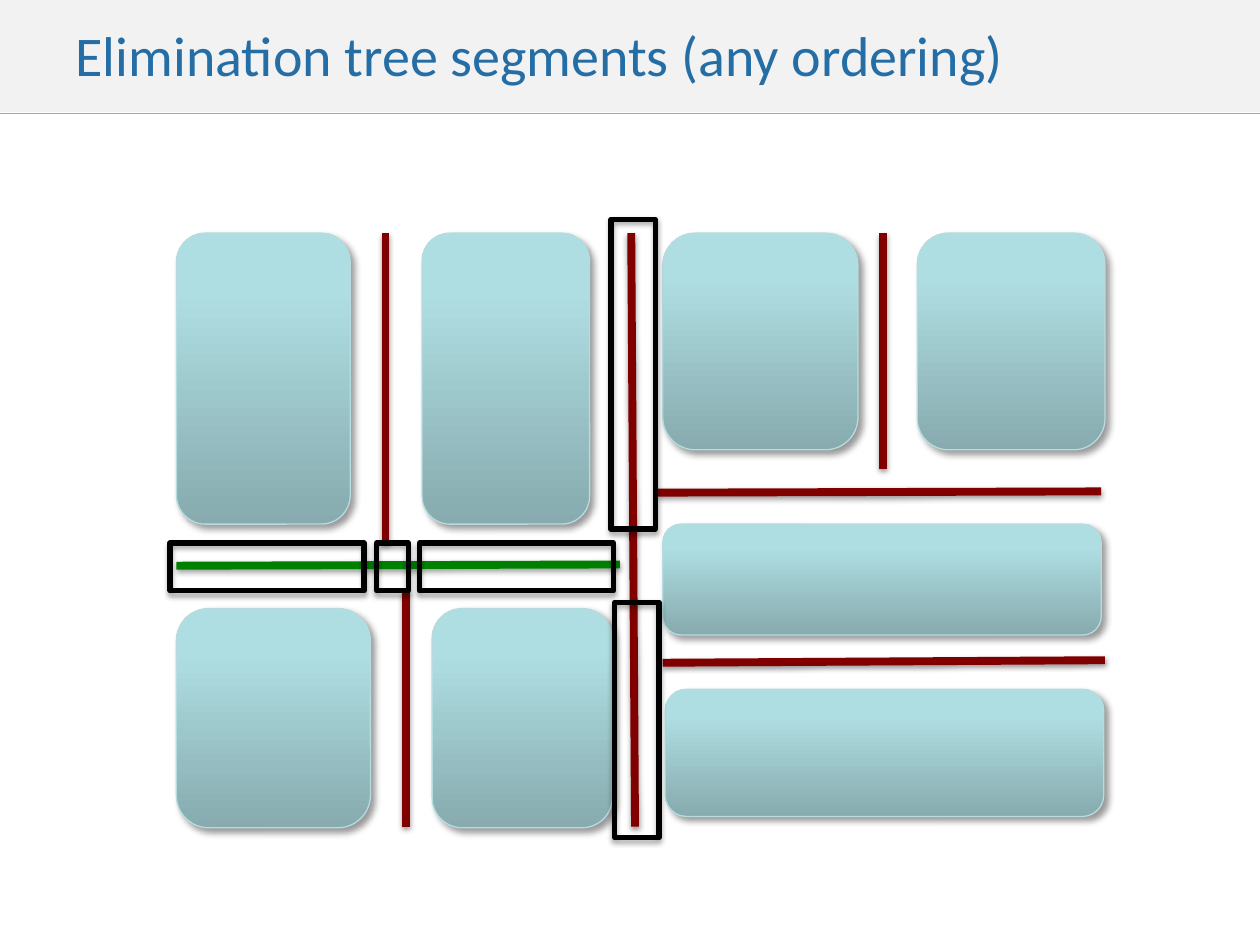
from typing import NamedTuple

from lxml.etree import SubElement
from pptx import Presentation
from pptx.dml.color import RGBColor
from pptx.enum.shapes import MSO_CONNECTOR, MSO_SHAPE
from pptx.enum.text import MSO_ANCHOR, MSO_AUTO_SIZE, PP_ALIGN
from pptx.oxml import parse_xml
from pptx.oxml.ns import nsdecls, qn
from pptx.util import Inches, Pt

COLORS = {
    "header": "F2F2F2",
    "rule": "A6A6A6",
    "title": "246DA5",
    "separator": "800000",
    "split": "008000",
    "segment": "000000",
    "shadow": "000000",
    "block_edge": "B6DCDF",
    "block_bottom": "87ABAE",
    "block_middle": "AFDEE2",
    "block_top": "AFE0E4",
}


class Box(NamedTuple):
    left: float
    top: float
    width: float
    height: float


class Separator(NamedTuple):
    x1: float
    y1: float
    x2: float
    y2: float
    color: str = "separator"


class Shadow(NamedTuple):
    opacity: int
    blur: float
    distance: float
    degrees: int


SEPARATOR_SHADOW = Shadow(38, 3.1, 1.6, 90)
BLOCK_SHADOW = Shadow(40, 4, 3, 45)
SEGMENT_SHADOW = Shadow(35, 3.1, 1.8, 90)

TOP = 1.85
BOTTOM = 6.56
LEFT = 1.4
RIGHT_HALF = 5.26
LOWER_ROW = 4.83
CROSSING = 4.31

SEPARATORS = [
    Separator(5.01, TOP, 5.04, BOTTOM),
    Separator(5.22, 3.91, 8.74, 3.9),
    Separator(LEFT, 4.49, 4.92, 4.48, "split"),
    Separator(3.06, TOP, 3.06, CROSSING),
    Separator(3.22, 4.69, 3.22, BOTTOM),
    Separator(7.01, TOP, 7.01, 3.72),
    Separator(RIGHT_HALF, 5.26, 8.77, 5.24),
]

BLOCKS = [
    Box(LEFT, TOP, 1.38, 2.31),
    Box(3.35, TOP, 1.33, 2.31),
    Box(RIGHT_HALF, TOP, 1.55, 1.72),
    Box(LEFT, LOWER_ROW, 1.54, 1.74),
    Box(7.28, TOP, 1.49, 1.72),
    Box(3.43, LOWER_ROW, 1.43, 1.74),
    Box(RIGHT_HALF, 4.16, 3.48, 0.88),
    Box(5.28, 5.47, 3.48, 1.01),
]

SEGMENTS = [
    Box(1.35, CROSSING, 1.54, 0.38),
    Box(2.99, CROSSING, 0.25, 0.38),
    Box(3.33, CROSSING, 1.54, 0.38),
    Box(4.85, 1.74, 0.35, 2.46),
    Box(4.88, 4.78, 0.35, 1.87),
]


def rgb(name: str) -> RGBColor:
    return RGBColor.from_string(COLORS[name])


def set_line(shape, color: str, width: float) -> None:
    shape.line.color.rgb = rgb(color)
    shape.line.width = Pt(width)


def set_effects(shape, shadow: Shadow | None = None) -> None:
    effects = SubElement(shape._element.spPr, qn("a:effectLst"))
    if shadow is None:
        return
    outer = SubElement(
        effects,
        qn("a:outerShdw"),
        blurRad=str(Pt(shadow.blur)),
        dist=str(Pt(shadow.distance)),
        dir=str(shadow.degrees * 60000),
        rotWithShape="0",
    )
    tint = SubElement(outer, qn("a:srgbClr"), val=COLORS["shadow"])
    SubElement(tint, qn("a:alpha"), val=str(shadow.opacity * 1000))


def add_line(slide, run: Separator, width: float, shadow: Shadow | None = None) -> None:
    ends = [Inches(value) for value in run[:4]]
    connector = slide.shapes.add_connector(MSO_CONNECTOR.STRAIGHT, *ends)
    set_line(connector, run.color, width)
    set_effects(connector, shadow)


def add_block(slide, box: Box) -> None:
    block = slide.shapes.add_shape(MSO_SHAPE.ROUNDED_RECTANGLE, *map(Inches, box))
    stops = [(0, "block_bottom"), (80, "block_middle"), (100, "block_top")]
    stop_xml = "".join(
        f'<a:gs pos="{position * 1000}"><a:srgbClr val="{COLORS[name]}"/></a:gs>'
        for position, name in stops
    )
    gradient = parse_xml(
        f'<a:gradFill {nsdecls("a")} rotWithShape="1"><a:gsLst>{stop_xml}</a:gsLst>'
        '<a:lin ang="16200000" scaled="0"/></a:gradFill>'
    )
    block._element.spPr.find(qn("a:prstGeom")).addnext(gradient)
    set_line(block, "block_edge", 0.75)
    set_effects(block, BLOCK_SHADOW)


def add_segment(slide, box: Box) -> None:
    segment = slide.shapes.add_shape(MSO_SHAPE.RECTANGLE, *map(Inches, box))
    segment.fill.background()
    set_line(segment, "segment", 3)
    set_effects(segment, SEGMENT_SHADOW)


def set_title(slide, text: str) -> None:
    title = slide.shapes.title
    title.left, title.top, title.width, title.height = map(Inches, (0, -0.03, 10, 0.92))
    title.fill.solid()
    title.fill.fore_color.rgb = rgb("header")
    frame = title.text_frame
    frame.text = text
    frame.word_wrap = True
    frame.auto_size = MSO_AUTO_SIZE.NONE
    frame.vertical_anchor = MSO_ANCHOR.MIDDLE
    frame.margin_left = Inches(0.6)
    paragraph = frame.paragraphs[0]
    paragraph.alignment = PP_ALIGN.LEFT
    font = paragraph.runs[0].font
    font.name = "Calibri"
    font.size = Pt(32)
    font.color.rgb = rgb("title")


def main() -> None:
    deck = Presentation()
    deck.slide_width, deck.slide_height = Inches(10), Inches(7.5)
    slide = deck.slides.add_slide(deck.slide_layouts[5])
    set_title(slide, "Elimination tree segments (any ordering)")
    add_line(slide, Separator(0, 0.9, 10, 0.9, "rule"), 1)
    for separator in SEPARATORS:
        add_line(slide, separator, 4.5, SEPARATOR_SHADOW)
    for block in BLOCKS:
        add_block(slide, block)
    for segment in SEGMENTS:
        add_segment(slide, segment)
    deck.save("out.pptx")


if __name__ == "__main__":
    main()
